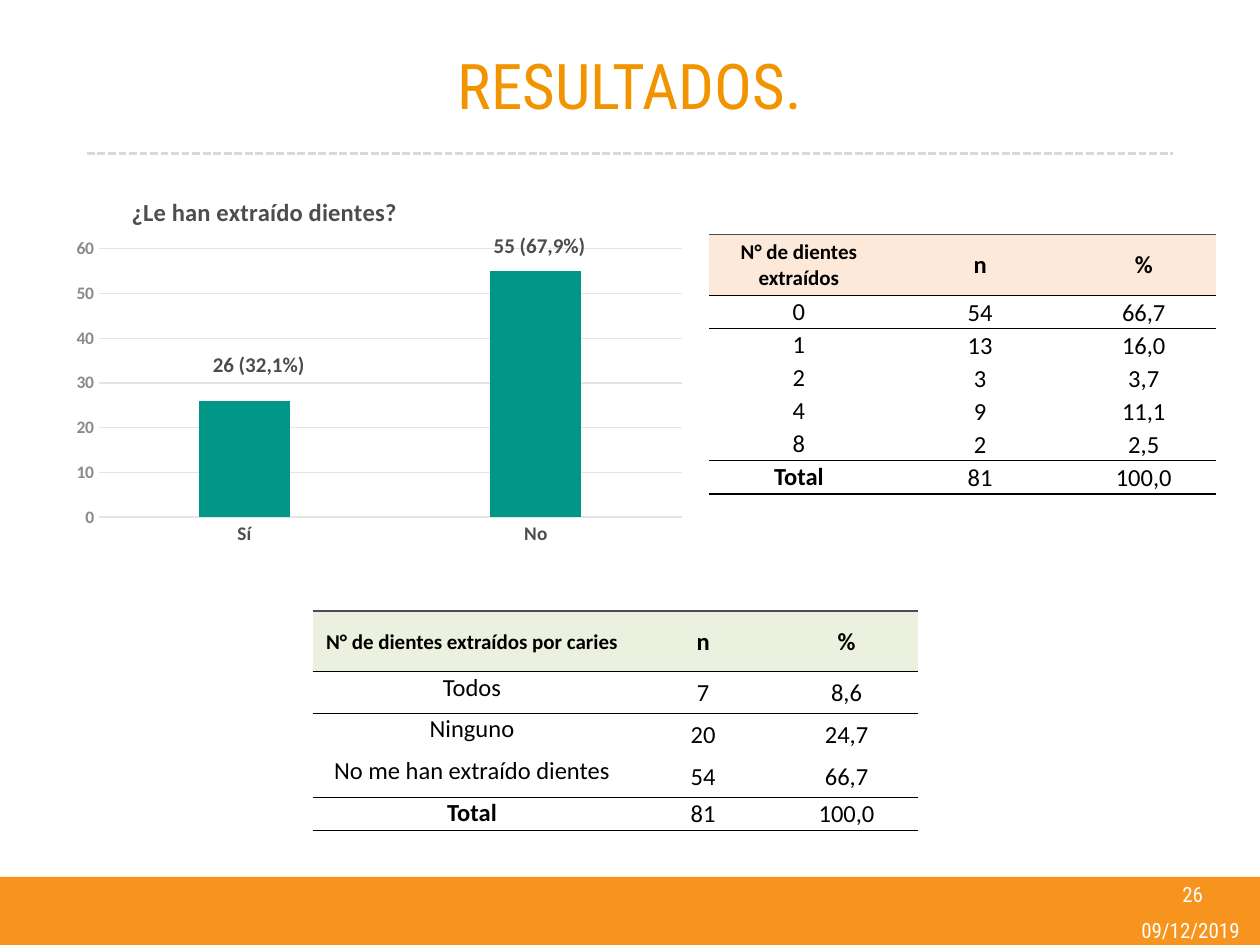
import pptx
import pptx.chart.data
import pptx.dml.color
import pptx.enum.chart
import pptx.enum.dml
import pptx.enum.shapes
import pptx.enum.text
import pptx.oxml
import pptx.oxml.ns
import pptx.util
from lxml import etree

Pt = pptx.util.Pt
ALIGN = pptx.enum.text.PP_ALIGN
ANCHOR = pptx.enum.text.MSO_ANCHOR
CHART = pptx.enum.chart
HEADING_FONT = "Roboto Condensed"
BODY_FONT = "Calibri"
BLACK, GRAY, GRID, WHITE = "000000", "4D4D4F", "E4E4E5", "FFFFFF"
PLAIN_TABLE_STYLE = "{2D5ABB26-0587-4C30-8999-92F81FD0307C}"

HEADINGS = [
    ("RESULTADOS.", (49.7, 9.4, 620.6, 77.8), 36, "F29400"),
    ("26", (643.7, 500.4, 75.6, 21.6), 12, WHITE),
    ("09/12/2019", (642.2, 524.2, 76.3, 15.1), 12, WHITE),
]
CHART_TITLE = "¿Le han extraído dientes?"
ANSWERS = {"Sí": 26, "No": 55}
BAR_LABELS = [
    ("26 (32,1%)", (114.5, 197.3, 102.2, 21.6)),
    ("55 (67,9%)", (275, 129.6, 102.2, 21.6)),
]
TABLES = [
    {
        "origin": (405.4, 133.9),
        "columns": [102.2, 105, 82],
        "heights": [35] + [18.9] * 6,
        "header_fill": "FDE9D9",
        "rows": [
            ("N° de dientes extraídos", "n", "%"),
            ("0", "54", "66,7"),
            ("1", "13", "16,0"),
            ("2", "3", "3,7"),
            ("4", "9", "11,1"),
            ("8", "2", "2,5"),
            ("Total", "81", "100,0"),
        ],
    },
    {
        "origin": (178.6, 349.2),
        "columns": [182.2, 82, 82],
        "heights": [34.5] + [24] * 3 + [18.9],
        "header_fill": "EBF1DE",
        "rows": [
            ("N° de dientes extraídos por caries", "n", "%"),
            ("Todos", "7", "8,6"),
            ("Ninguno", "20", "24,7"),
            ("No me han extraído dientes", "54", "66,7"),
            ("Total", "81", "100,0"),
        ],
    },
]


def color(value):
    return pptx.dml.color.RGBColor.from_string(value)


def format_font(font, size, fill, name=BODY_FONT, bold=False):
    font.size, font.name, font.bold = Pt(size), name, bold
    font.color.rgb = color(fill)


def write(frame, text, align=ALIGN.CENTER, margin=0, **style):
    frame.word_wrap = True
    frame.margin_left = frame.margin_right = Pt(margin)
    frame.margin_top = frame.margin_bottom = Pt(margin / 2)
    paragraph = frame.paragraphs[0]
    paragraph.alignment = align
    run = paragraph.add_run()
    run.text = text
    format_font(run.font, **style)


def add_text(slide, text, box, anchor=ANCHOR.MIDDLE, **style):
    shape = slide.shapes.add_textbox(*map(Pt, box))
    shape.text_frame.vertical_anchor = anchor
    write(shape.text_frame, text, **style)


def add_frame(slide):
    band = slide.shapes.add_shape(
        pptx.enum.shapes.MSO_SHAPE.RECTANGLE, Pt(0), Pt(501.1), Pt(720), Pt(40.3))
    band.shadow.inherit = False
    band.fill.solid()
    band.fill.fore_color.rgb = color("F7941D")
    band.line.fill.background()
    rule = slide.shapes.add_connector(
        pptx.enum.shapes.MSO_CONNECTOR.STRAIGHT, Pt(49.7), Pt(87.6), Pt(670.3), Pt(87.6))
    rule.line.color.rgb = color("D9D9D9")
    rule.line.width = Pt(1.5)
    rule.line.dash_style = pptx.enum.dml.MSO_LINE.SQUARE_DOT
    properties = rule.element.find(pptx.oxml.ns.qn("p:spPr"))
    etree.SubElement(properties, pptx.oxml.ns.qn("a:effectLst"))


def set_layout(element, inner=False, **place):
    layout = element.find(pptx.oxml.ns.qn("c:layout"))
    if layout is not None:
        element.remove(layout)
    target = '<c:layoutTarget val="inner"/>' if inner else ""
    modes = "".join(f'<c:{key}Mode val="edge"/>' for key in "xy")
    values = "".join(f'<c:{key} val="{value}"/>' for key, value in place.items())
    layout = pptx.oxml.parse_xml(
        f'<c:layout {pptx.oxml.ns.nsdecls("c")}><c:manualLayout>'
        f'{target}{modes}{values}</c:manualLayout></c:layout>')
    element.insert(0 if inner else 1, layout)


def add_answer_chart(slide):
    data = pptx.chart.data.CategoryChartData(number_format="###0")
    data.categories = list(ANSWERS)
    data.add_series("Series 1", list(ANSWERS.values()))
    chart = slide.shapes.add_chart(
        CHART.XL_CHART_TYPE.COLUMN_CLUSTERED, Pt(36.7), Pt(100.1), Pt(360), Pt(216), data).chart
    format_font(chart.font, 10, GRAY, "Arial")
    chart.has_legend = False
    chart.has_title = True
    write(chart.chart_title.text_frame, CHART_TITLE, size=14, fill=GRAY, bold=True)
    chart.chart_title.include_in_layout = False
    set_layout(chart.chart_title._element, x=0.1, y=0.04)
    plot_area = chart._chartSpace.chart.plotArea
    set_layout(plot_area, inner=True, x=0.055, y=0.195, w=0.925, h=0.71)
    plot = chart.plots[0]
    plot.gap_width, plot.overlap, plot.vary_by_categories = 219, -27, False
    series_fill = plot.series[0].format.fill
    series_fill.solid()
    series_fill.fore_color.rgb = color("009688")
    for axis, size, fill in ((chart.category_axis, 11, GRAY), (chart.value_axis, 10, "8A8A8D")):
        axis.major_tick_mark = axis.minor_tick_mark = CHART.XL_TICK_MARK.NONE
        format_font(axis.tick_labels.font, size, fill, bold=True)
    values = chart.value_axis
    values.minimum_scale, values.maximum_scale, values.major_unit = 0, 60, 10
    values.tick_labels.number_format = "###0"
    values.tick_labels.number_format_is_linked = False
    values.format.line.fill.background()
    for line in (chart.category_axis.format.line, values.major_gridlines.format.line):
        line.color.rgb = color(GRID)
        line.width = Pt(0.75)


def add_border(cell, side, line_color):
    cell._tc.get_or_add_tcPr().append(pptx.oxml.parse_xml(
        f'<a:ln{side} {pptx.oxml.ns.nsdecls("a")} w="12700"><a:solidFill>'
        f'<a:srgbClr val="{line_color}"/></a:solidFill></a:ln{side}>'))


def add_data_table(slide, origin, columns, heights, header_fill, rows):
    table = slide.shapes.add_table(
        len(rows), len(columns), *map(Pt, (*origin, sum(columns), sum(heights)))).table
    table.first_row = table.horz_banding = False
    table._tbl.tblPr.find(pptx.oxml.ns.qn("a:tableStyleId")).text = PLAIN_TABLE_STYLE
    for column, width in zip(table.columns, columns):
        column.width = Pt(width)
    last = len(rows) - 1
    for r, values in enumerate(rows):
        table.rows[r].height = Pt(heights[r])
        for c, value in enumerate(values):
            cell = table.cell(r, c)
            header, first = r == 0, c == 0
            write(cell.text_frame, value, size=12 if header and first else 14,
                  fill=BLACK, bold=header or (r == last and first))
            cell.vertical_anchor = ANCHOR.MIDDLE if header or not first else ANCHOR.TOP
            cell.margin_left = cell.margin_right = cell.margin_top = Pt(0.72)
            cell.margin_bottom = Pt(0)
            if r in (0, 1, last):
                add_border(cell, "T", GRAY if header else BLACK)
            if r in (0, last - 1, last):
                add_border(cell, "B", BLACK)
            if header:
                cell.fill.solid()
                cell.fill.fore_color.rgb = color(header_fill)
            else:
                cell.fill.background()


def main():
    presentation = pptx.Presentation()
    presentation.slide_width, presentation.slide_height = Pt(720), Pt(540)
    slide = presentation.slides.add_slide(presentation.slide_layouts[6])
    add_frame(slide)
    for text, box, size, fill in HEADINGS:
        add_text(slide, text, box, size=size, fill=fill, name=HEADING_FONT)
    add_answer_chart(slide)
    for text, box in BAR_LABELS:
        add_text(slide, text, box, anchor=ANCHOR.TOP, align=ALIGN.LEFT, margin=7.2,
                 size=12, fill=GRAY, bold=True)
    for table in TABLES:
        add_data_table(slide, **table)
    presentation.save("out.pptx")


if __name__ == "__main__":
    main()
